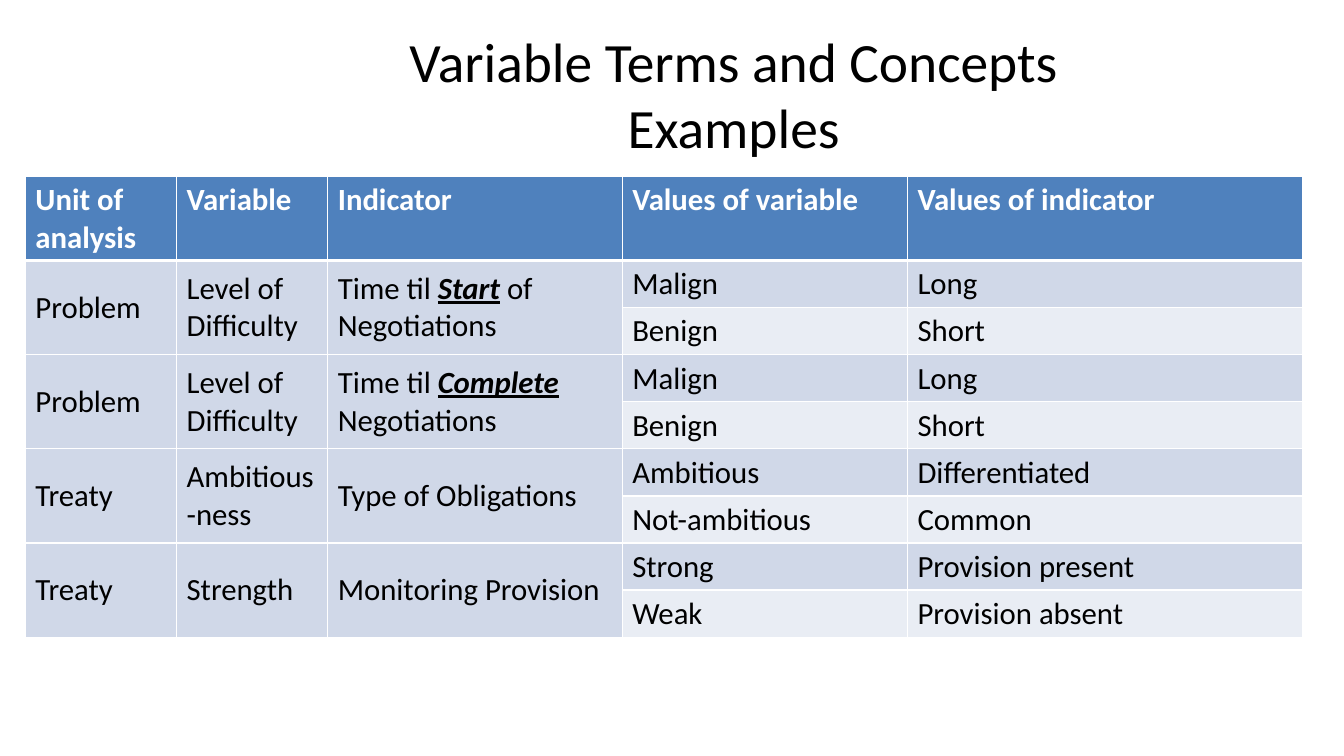
from lxml import etree
from pptx import Presentation
from pptx import util as u
from pptx.dml.color import RGBColor
from pptx.enum import text
from pptx.oxml.ns import qn

COLORS = {"ink": "000000", "white": "FFFFFF", "header": "4F81BD",
          "band": "D0D8E8", "light": "E9EDF4"}
HEADINGS = ["Unit of analysis", "Variable", "Indicator",
            "Values of variable", "Values of indicator"]
# Unit, variable, indicator (*emphasis*), then two (variable, indicator) values
EXAMPLES = [
    ("Problem", "Level of Difficulty", "Time til *Start* of Negotiations",
     [("Malign", "Long"), ("Benign", "Short")]),
    ("Problem", "Level of Difficulty", "Time til *Complete* Negotiations",
     [("Malign", "Long"), ("Benign", "Short")]),
    ("Treaty", "Ambitious-ness", "Type of Obligations",
     [("Ambitious", "Differentiated"), ("Not-ambitious", "Common")]),
    ("Treaty", "Strength", "Monitoring Provision",
     [("Strong", "Provision present"), ("Weak", "Provision absent")]),
]
COLUMN_WIDTHS = [3.81, 3.81, 7.42, 7.19, 9.96]
HEADER_HEIGHT, ROW_HEIGHT = 1.8, 1.04


class SlideBuilder:
    def __init__(self, page, font="Calibri"):
        self.page = page
        self.font = font

    def style(self, span, size, color, bold=False):
        span.font.name = self.font
        span.font.size = u.Pt(size)
        span.font.bold = bold
        span.font.color.rgb = RGBColor.from_string(COLORS[color])

    def title(self, words, left, top, width, height):
        box = self.page.shapes.add_textbox(*map(u.Cm, (left, top, width, height)))
        frame = box.text_frame
        frame.word_wrap = True
        frame.vertical_anchor = text.MSO_ANCHOR.MIDDLE
        para = frame.paragraphs[0]
        para.text = words
        para.alignment = text.PP_ALIGN.CENTER
        for span in para.runs:
            self.style(span, 39.6, "ink")

    def borders(self, cell, top, bottom):
        """Draw white borders; top and bottom are widths in points."""
        properties = cell._tc.get_or_add_tcPr()
        for side, width in (("L", 1), ("R", 1), ("T", top), ("B", bottom)):
            line = etree.SubElement(properties, qn(f"a:ln{side}"), w=str(u.Pt(width)))
            fill = etree.SubElement(line, qn("a:solidFill"))
            etree.SubElement(fill, qn("a:srgbClr"), val=COLORS["white"])

    def cell(self, cell, words, fill, row):
        header = row == 0
        self.borders(cell, 3 if row == 1 else 1, 3 if header else 1)
        cell.fill.solid()
        cell.fill.fore_color.rgb = RGBColor.from_string(COLORS[fill])
        cell.vertical_anchor = text.MSO_ANCHOR.TOP if header else text.MSO_ANCHOR.MIDDLE
        para = cell.text_frame.paragraphs[0]
        para.font.size = u.Pt(22)
        for index, part in enumerate(words.split("*")):
            if not part:
                continue
            emphasis = index % 2 == 1
            span = para.add_run()
            span.text = part
            self.style(span, 22, "white" if header else "ink", header or emphasis)
            if emphasis:
                span.font.italic = span.font.underline = True

    def table(self, left, top):
        row_count = 1 + 2 * len(EXAMPLES)
        height = HEADER_HEIGHT + ROW_HEIGHT * (row_count - 1)
        frame = self.page.shapes.add_table(
            row_count, len(HEADINGS), u.Cm(left), u.Cm(top),
            u.Cm(sum(COLUMN_WIDTHS)), u.Cm(height))
        table = frame.table
        for column, width in zip(table.columns, COLUMN_WIDTHS):
            column.width = u.Cm(width)
        for index, row in enumerate(table.rows):
            row.height = u.Cm(ROW_HEIGHT if index else HEADER_HEIGHT)

        for column, heading in enumerate(HEADINGS):
            self.cell(table.cell(0, column), heading, "header", 0)
        for index, (*subject, values) in enumerate(EXAMPLES):
            first = 1 + 2 * index
            for offset, pair in enumerate(values):
                row = first + offset
                shared = ["", "", ""] if offset else subject
                for column, words in enumerate([*shared, *pair]):
                    fill = "light" if offset and column >= len(subject) else "band"
                    self.cell(table.cell(row, column), words, fill, row)
            for column in range(len(subject)):
                table.cell(first, column).merge(table.cell(first + 1, column))


def main():
    deck = Presentation()
    deck.slide_width, deck.slide_height = u.Cm(33.87), u.Cm(19.05)
    builder = SlideBuilder(deck.slides.add_slide(deck.slide_layouts[6]))
    builder.title("Variable Terms and Concepts\vExamples", 4.8, 0.76, 27.38, 3.18)
    builder.table(0.64, 4.45)
    deck.save("out.pptx")


if __name__ == "__main__":
    main()
